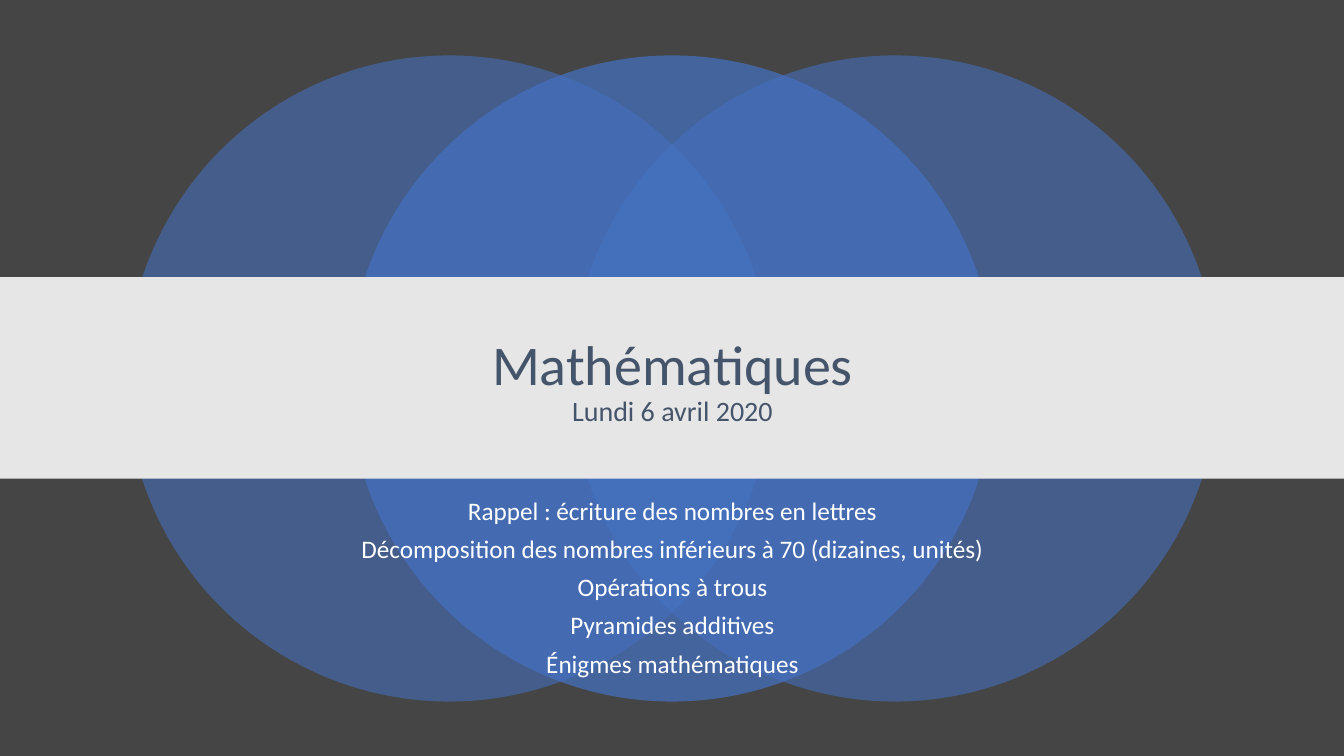
from dataclasses import dataclass

from lxml import etree
from pptx import Presentation
from pptx import util as u
from pptx.dml import color
from pptx.enum import shapes, text
from pptx.oxml import ns


@dataclass(frozen=True)
class Theme:
    font: str = "Calibri"
    background: str = "454545"
    circle: str = "4472C4"
    band: str = "E7E6E6"
    heading: str = "44546A"
    body: str = "FFFFFF"
    title_size: int = 40
    date_size: int = 20
    topic_size: int = 18


THEME = Theme()
TOPICS = [
    "Rappel : écriture des nombres en lettres",
    "Décomposition des nombres inférieurs à 70 (dizaines, unités)",
    "Opérations à trous",
    "Pyramides additives",
    "Énigmes mathématiques",
]


def rgb(value):
    return color.RGBColor.from_string(value)


def place(sp, left, top, width, height):
    sp.left, sp.top = u.Inches(left), u.Inches(top)
    sp.width, sp.height = u.Inches(width), u.Inches(height)


def add_filled(s, kind, box, fill, opacity=100):
    sp = s.shapes.add_shape(kind, *map(u.Inches, box))
    sp.shadow.inherit = False
    sp.line.fill.background()
    sp.fill.solid()
    sp.fill.fore_color.rgb = rgb(fill)
    if opacity < 100:
        clr = sp.element.spPr.find(".//" + ns.qn("a:srgbClr"))
        etree.SubElement(clr, ns.qn("a:alpha"), val=str(opacity * 1000))


def add_run(p, words, size, fill):
    r = p.add_run()
    r.text = words
    r.font.name = THEME.font
    r.font.size = u.Pt(size)
    r.font.color.rgb = rgb(fill)


def add_circles(s):
    size, middle, step = 6.41, 3.46, 2.21
    for offset, opacity in ((-1, 55), (1, 55), (0, 70)):
        box = (middle + offset * step, 0.55, size, size)
        add_filled(s, shapes.MSO_SHAPE.OVAL, box, THEME.circle, opacity)


def add_title(s):
    sp = s.shapes.title
    sp.element.getparent().append(sp.element)
    place(sp, 1.67, 3.04, 10, 1.51)
    tf = sp.text_frame
    tf.word_wrap = True
    tf.vertical_anchor = text.MSO_ANCHOR.MIDDLE
    p = tf.paragraphs[0]
    p.alignment = text.PP_ALIGN.CENTER
    p.line_spacing = 0.9
    add_run(p, "Mathématiques", THEME.title_size, THEME.heading)
    p.add_line_break()
    add_run(p, "Lundi 6 avril 2020", THEME.date_size, THEME.heading)


def add_topics(s):
    box = (1.67, 4.92, 10, 1.89)
    tf = s.shapes.add_textbox(*map(u.Inches, box)).text_frame
    tf.word_wrap = True
    for i, topic in enumerate(TOPICS):
        p = tf.add_paragraph() if i else tf.paragraphs[0]
        p.alignment = text.PP_ALIGN.CENTER
        p.line_spacing = 0.8
        p.space_before = u.Pt(10)
        add_run(p, topic, THEME.topic_size, THEME.body)


def main():
    prs = Presentation()
    prs.slide_width, prs.slide_height = u.Inches(13.33), u.Inches(7.5)
    s = prs.slides.add_slide(prs.slide_layouts.get_by_name("Title Only"))
    s.background.fill.solid()
    s.background.fill.fore_color.rgb = rgb(THEME.background)
    add_circles(s)
    add_filled(s, shapes.MSO_SHAPE.RECTANGLE, (0, 2.75, 13.33, 2), THEME.band)
    add_title(s)
    add_topics(s)
    prs.save("out.pptx")


if __name__ == "__main__":
    main()
